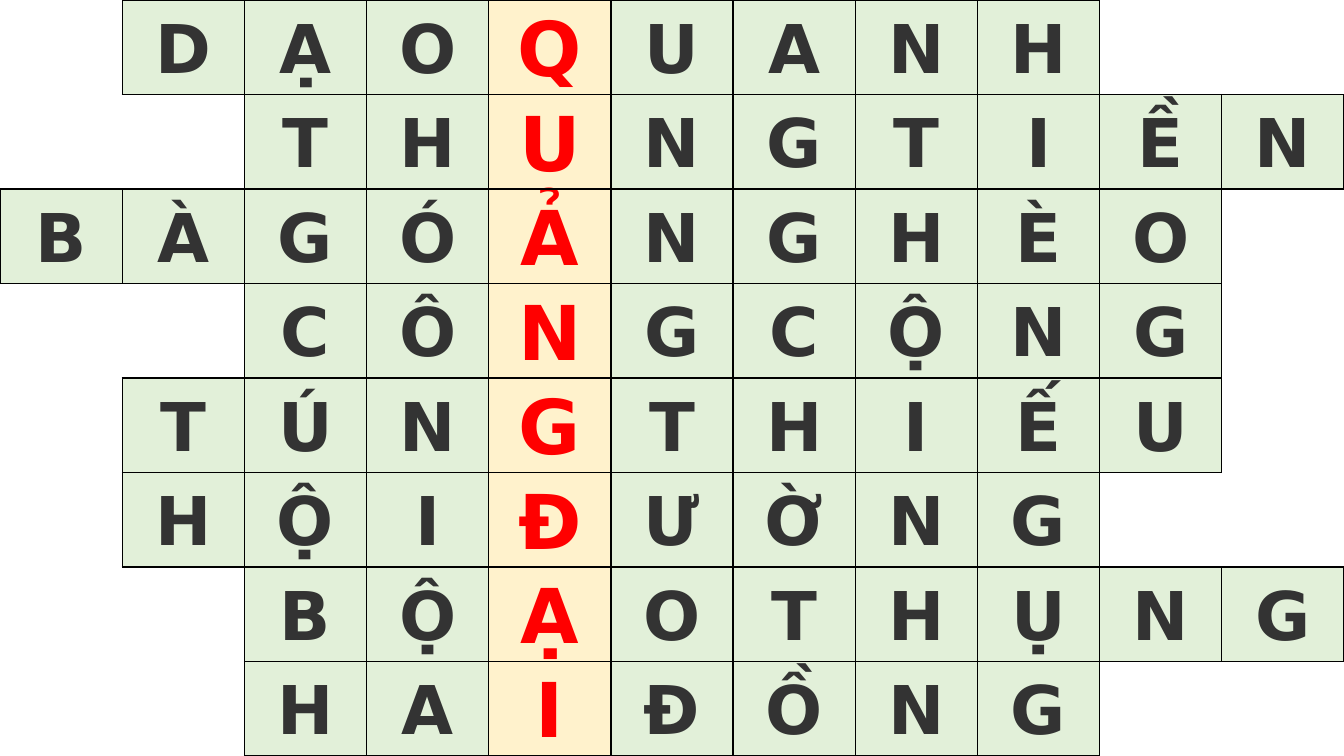
from dataclasses import dataclass

from lxml import etree
from pptx import Presentation
from pptx import util as u
from pptx.dml.color import RGBColor
from pptx.enum import text
from pptx.oxml import ns


@dataclass(frozen=True)
class Theme:
    font: str = "DejaVu Sans"
    letter_color: str = "333333"
    key_color: str = "FF0000"
    letter_fill: str = "E2F0D9"
    key_fill: str = "FFF2CC"
    border_color: str = "000000"
    letter_size: int = 48
    key_size: int = 54
    border_width: int = 1


THEME = Theme()
WIDTH, HEIGHT = u.Inches(13.33), u.Inches(7.5)
COLUMNS, KEY_COLUMN = 11, 4

# Each answer with the column of its first letter
ANSWERS = [
    (1, "DẠOQUANH"),
    (2, "THUNGTIỀN"),
    (0, "BÀGÓẢNGHÈO"),
    (2, "CÔNGCỘNG"),
    (1, "TÚNGTHIẾU"),
    (1, "HỘIĐƯỜNG"),
    (2, "BỘẠOTHỤNG"),
    (2, "HAIĐỒNG"),
]

# Border tags with the row and column step to the neighbour on that side
SIDES = {"lnL": (0, -1), "lnR": (0, 1), "lnT": (-1, 0), "lnB": (1, 0)}

CELL_FORMAT = {
    "vertical_anchor": text.MSO_ANCHOR.MIDDLE,
    "margin_left": u.Inches(0.07),
    "margin_right": u.Inches(0.07),
    "margin_top": 0,
    "margin_bottom": 0,
}
PARA_FORMAT = {
    "alignment": text.PP_ALIGN.CENTER,
    "line_spacing": 1.07,
    "space_after": u.Pt(8),
}


def apply_format(target, values):
    for name, value in values.items():
        setattr(target, name, value)


def set_borders(cell, visible_sides):
    properties = cell._tc.get_or_add_tcPr()
    for side in SIDES:
        line = etree.SubElement(properties, ns.qn(f"a:{side}"))
        if side in visible_sides:
            line.set("w", str(u.Pt(THEME.border_width)))
            fill = etree.SubElement(line, ns.qn("a:solidFill"))
            color = etree.SubElement(fill, ns.qn("a:srgbClr"))
            color.set("val", THEME.border_color)
        else:
            etree.SubElement(line, ns.qn("a:noFill"))


def write_letter(cell, letter, is_key):
    apply_format(cell, CELL_FORMAT)
    cell.fill.solid()
    fill_color = THEME.key_fill if is_key else THEME.letter_fill
    cell.fill.fore_color.rgb = RGBColor.from_string(fill_color)

    para = cell.text_frame.paragraphs[0]
    apply_format(para, PARA_FORMAT)
    span = para.add_run()
    span.text = letter
    size = THEME.key_size if is_key else THEME.letter_size
    apply_format(span.font, {"name": THEME.font, "size": u.Pt(size), "bold": True})
    text_color = THEME.key_color if is_key else THEME.letter_color
    span.font.color.rgb = RGBColor.from_string(text_color)


def add_crossword(page):
    frame = page.shapes.add_table(len(ANSWERS), COLUMNS, 0, 0, WIDTH, HEIGHT)
    table = frame.table
    apply_format(table, {"first_row": False, "horz_banding": False})

    letters = {
        (row, start + offset): letter
        for row, (start, answer) in enumerate(ANSWERS)
        for offset, letter in enumerate(answer)
    }
    for row in range(len(ANSWERS)):
        for column in range(COLUMNS):
            cell = table.cell(row, column)
            letter = letters.get((row, column))
            # A side shows when a letter stands on either side of it
            set_borders(cell, {
                side for side, (down, right) in SIDES.items()
                if letter or (row + down, column + right) in letters
            })
            if letter:
                write_letter(cell, letter, column == KEY_COLUMN)
            else:
                cell.fill.background()


def main():
    deck = Presentation()
    apply_format(deck, {"slide_width": WIDTH, "slide_height": HEIGHT})
    page = deck.slides.add_slide(deck.slide_layouts[6])
    add_crossword(page)
    deck.save("out.pptx")


if __name__ == "__main__":
    main()
